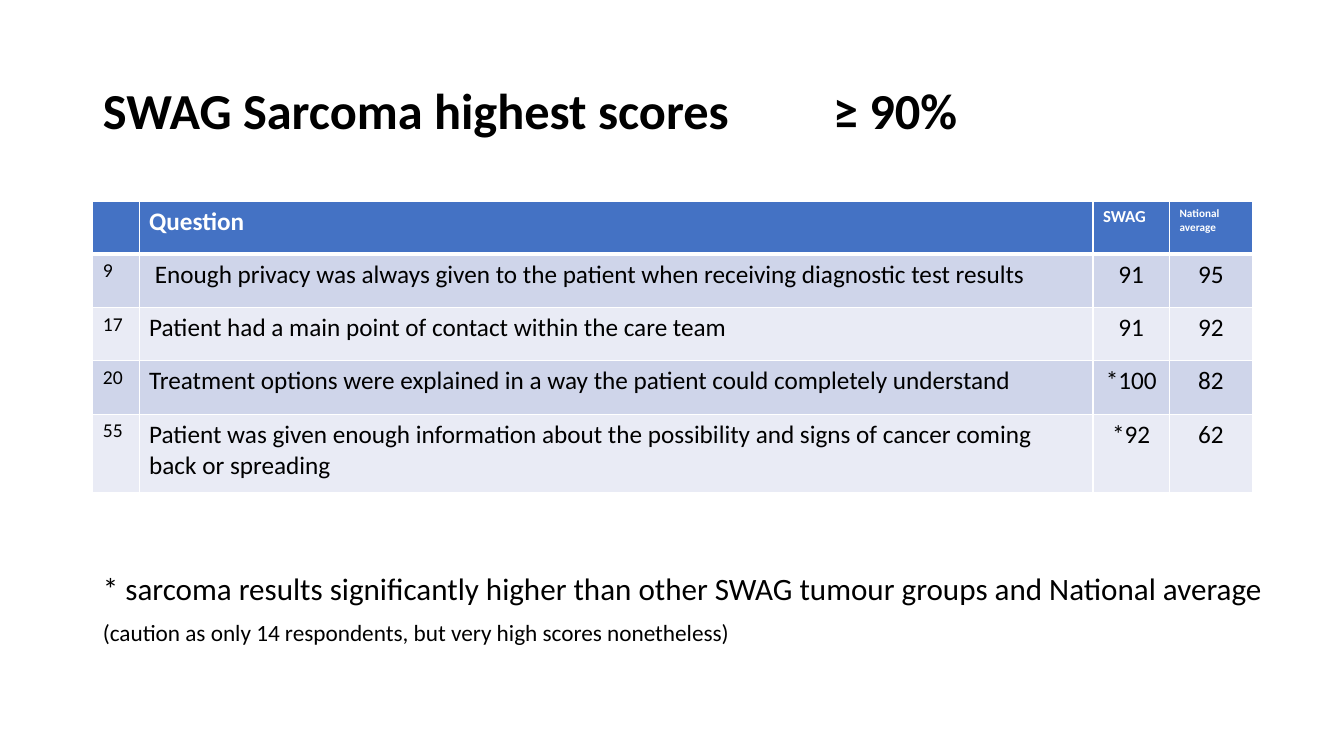
from lxml.etree import SubElement
from pptx import Presentation
from pptx.dml.color import RGBColor
from pptx.enum.text import MSO_ANCHOR, MSO_AUTO_SIZE, PP_ALIGN
from pptx.oxml.ns import qn
from pptx.util import Inches, Pt

TITLE = "SWAG Sarcoma highest scores\t≥ 90%"
HEADER = ["", "Question", "SWAG", "National average"]
SCORES = [
    ["9", " Enough privacy was always given to the patient when receiving diagnostic test results", "91", "95"],
    ["17", "Patient had a main point of contact within the care team", "91", "92"],
    ["20", "Treatment options were explained in a way the patient could completely understand", "*100", "82"],
    ["55", "Patient was given enough information about the possibility and signs of cancer coming back or spreading", "*92", "62"],
]
NOTES = [
    ("* sarcoma results significantly higher than other SWAG tumour groups and National average", 22.2, 0),
    ("(caution as only 14 respondents, but very high scores nonetheless)", 16.6, 10),
]
COL_WIDTHS = [0.46, 9.46, 0.76, 0.82]
ROW_HEIGHTS = [0.52, 0.53, 0.53, 0.53, 0.78]
HEADER_SIZES = [18, 18, 12, 8]
SCORE_SIZES = [14, 18, 18, 18]
HEADER_FILL, BANDS = "4472C4", ["CFD5EA", "E9EBF5"]
LEFT, TAB_STOP = 0.92, 7.24


def rgb(value):
    return RGBColor.from_string(value)


def apply(target, values):
    for name, value in values.items():
        setattr(target, name, value)


def write(p, text, size, color="000000", bold=False, **layout):
    apply(p, layout)
    r = p.add_run()
    r.text = text
    apply(r.font, {"name": "Calibri", "size": Pt(size), "bold": bold})
    r.font.color.rgb = rgb(color)


def place(sp, left, top, width, height, anchor):
    apply(sp, {"left": Inches(left), "top": Inches(top), "width": Inches(width), "height": Inches(height)})
    apply(sp.text_frame, {"word_wrap": True, "auto_size": MSO_AUTO_SIZE.NONE, "vertical_anchor": anchor})
    return sp.text_frame


def add_borders(cell, widths):
    tcPr = cell._tc.get_or_add_tcPr()
    for side, width in widths.items():
        ln = SubElement(tcPr, qn(f"a:ln{side}"), w=str(Pt(width)))
        fill = SubElement(ln, qn("a:solidFill"))
        SubElement(fill, qn("a:srgbClr"), val="FFFFFF")


def add_title(s):
    tf = place(s.shapes.title, LEFT, 0.4, 11.5, 1.45, MSO_ANCHOR.MIDDLE)
    p = tf.paragraphs[0]
    tabs = SubElement(p._p.get_or_add_pPr(), qn("a:tabLst"))
    SubElement(tabs, qn("a:tab"), pos=str(Inches(TAB_STOP)), algn="l")
    write(p, TITLE, 36, bold=True, alignment=PP_ALIGN.LEFT, line_spacing=0.9)


def add_scores(s):
    rows = [HEADER] + SCORES
    frame = s.shapes.add_table(len(rows), len(HEADER), Inches(LEFT), Inches(2),
                               Inches(sum(COL_WIDTHS)), Inches(sum(ROW_HEIGHTS)))
    table = frame.table
    for column, width in zip(table.columns, COL_WIDTHS):
        column.width = Inches(width)
    for i, (row, height) in enumerate(zip(rows, ROW_HEIGHTS)):
        table.rows[i].height = Inches(height)
        is_header = i == 0
        sizes = HEADER_SIZES if is_header else SCORE_SIZES
        for j, text in enumerate(row):
            cell = table.cell(i, j)
            add_borders(cell, {"L": 1, "R": 1, "T": 3 if i == 1 else 1, "B": 3 if is_header else 1})
            cell.fill.solid()
            cell.fill.fore_color.rgb = rgb(HEADER_FILL if is_header else BANDS[(i - 1) % 2])
            if text:
                centred = not is_header and j > 1
                write(cell.text_frame.paragraphs[0], text, sizes[j],
                      "FFFFFF" if is_header else "000000", is_header,
                      alignment=PP_ALIGN.CENTER if centred else PP_ALIGN.LEFT)


def add_notes(s):
    tf = place(s.placeholders[1], LEFT, 5.64, 11.78, 1.09, MSO_ANCHOR.TOP)
    for i, (text, size, before) in enumerate(NOTES):
        p = tf.add_paragraph() if i else tf.paragraphs[0]
        pPr = p._p.get_or_add_pPr()
        for name in ("marL", "indent"):
            pPr.set(name, "0")
        SubElement(pPr, qn("a:buNone"))
        write(p, text, size, line_spacing=0.9, space_before=Pt(before))


def main():
    prs = Presentation()
    apply(prs, {"slide_width": Inches(13.33), "slide_height": Inches(7.5)})
    s = prs.slides.add_slide(prs.slide_layouts[1])
    add_title(s)
    add_scores(s)
    add_notes(s)
    prs.save("out.pptx")


if __name__ == "__main__":
    main()
